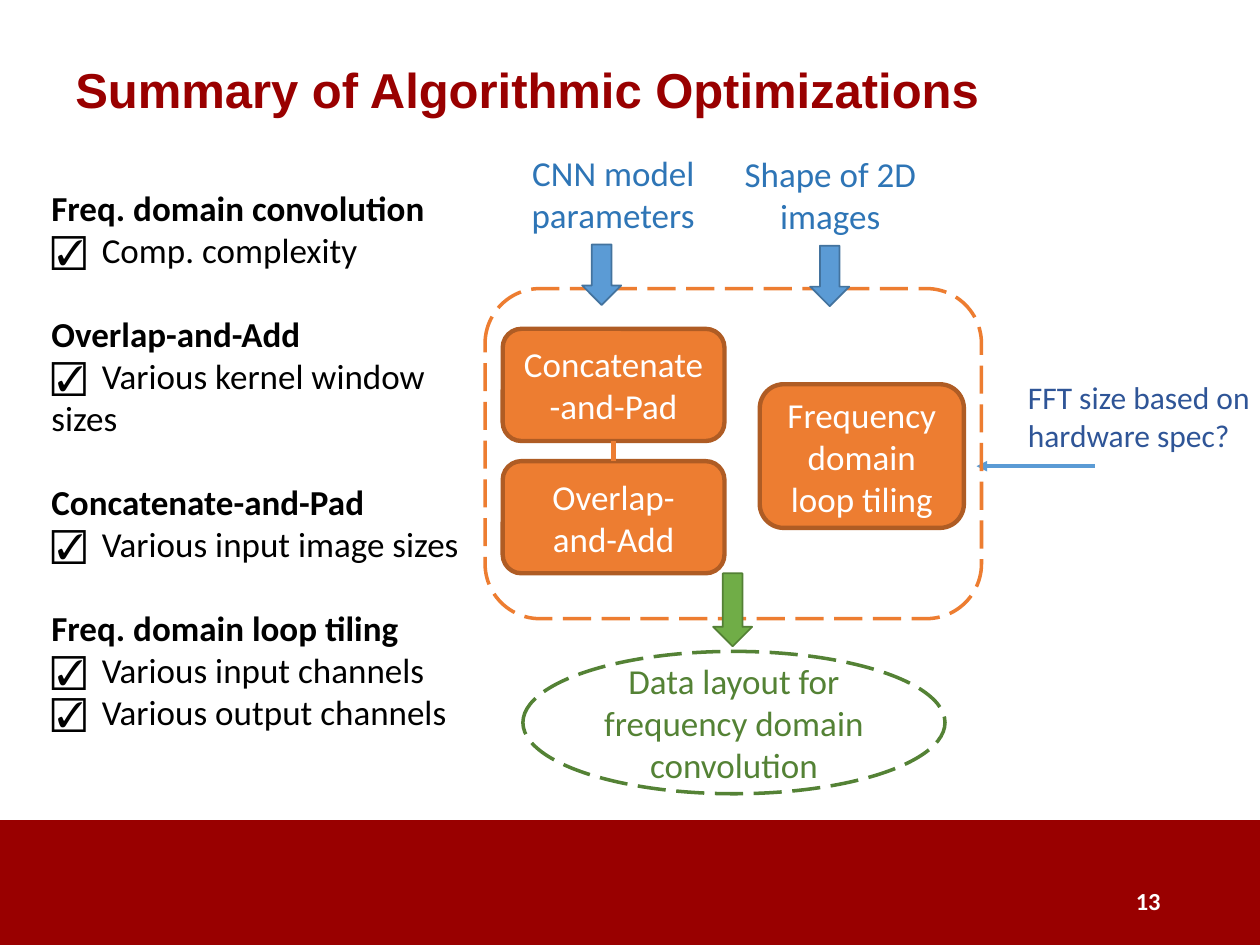
from dataclasses import dataclass

from pptx import Presentation
from pptx import util as u
from pptx.dml.color import RGBColor
from pptx.enum import dml, shapes, text
from pptx.oxml.ns import qn
from lxml import etree

COLORS = {
    "cardinal": "990000", "white": "FFFFFF", "black": "000000",
    "orange": "ED7D31", "rust": "AF5C24",
    "sky": "5B9BD5", "steel": "43739E", "blue": "2E75B6", "navy": "2F5597",
    "leaf": "70AD47", "forest": "538035", "green": "548235",
}
COLUMNS, ROWS = 100, 75
CHECKLIST = {
    "Freq. domain convolution": ["Comp. complexity"],
    "Overlap-and-Add": ["Various kernel window sizes"],
    "Concatenate-and-Pad": ["Various input image sizes"],
    "Freq. domain loop tiling": ["Various input channels", "Various output channels"],
}
LEFT, CENTER, RIGHT = text.PP_ALIGN.LEFT, text.PP_ALIGN.CENTER, text.PP_ALIGN.RIGHT
TOP, MIDDLE = text.MSO_ANCHOR.TOP, text.MSO_ANCHOR.MIDDLE
SHAPE = shapes.MSO_SHAPE

prs = Presentation()
prs.slide_width, prs.slide_height = u.Inches(10), u.Inches(7.5)
slide = prs.slides.add_slide(prs.slide_layouts[6])


@dataclass
class Box:
    """A region measured in columns and rows of the slide grid."""
    left: float
    top: float
    width: float
    height: float

    def inner(self, left, top, width, height):
        return Box(self.left + left, self.top + top, width, height)

    def emu(self):
        column, row = prs.slide_width / COLUMNS, prs.slide_height / ROWS
        return [round(n * unit) for n, unit in
                zip((self.left, self.top, self.width, self.height), (column, row) * 2)]


def rgb(name):
    return RGBColor.from_string(COLORS[name])


def format_runs(paragraph, size, color, bold=False, font="Calibri"):
    for run in paragraph.runs:
        run.font.size, run.font.bold, run.font.name = u.Pt(size), bold, font
        run.font.color.rgb = rgb(color)


def write(frame, words, size, color, align=LEFT, anchor=TOP, **style):
    frame.word_wrap, frame.vertical_anchor = True, anchor
    frame.text = words
    paragraph = frame.paragraphs[0]
    paragraph.alignment = align
    format_runs(paragraph, size, color, **style)
    return paragraph


def label(box, words, size, color, **style):
    return write(slide.shapes.add_textbox(*box.emu()).text_frame, words, size, color, **style)


def set_line(line, color, weight, dashed=False):
    line.color.rgb, line.width = rgb(color), u.Pt(weight)
    if dashed:
        line.dash_style = dml.MSO_LINE.LONG_DASH


def draw(box, kind, fill=None, line=None, weight=1, dashed=False):
    shape = slide.shapes.add_shape(kind, *box.emu())
    shape.shadow.inherit = False
    if fill:
        shape.fill.solid()
        shape.fill.fore_color.rgb = rgb(fill)
    else:
        shape.fill.background()
    if line:
        set_line(shape.line, line, weight, dashed)
    else:
        shape.line.fill.background()
    return shape


def connect(box, color, weight, arrow=False):
    """Run a line from the box's left top by its width and height, which may be negative."""
    left, top, width, height = box.emu()
    link = slide.shapes.add_connector(
        shapes.MSO_CONNECTOR.STRAIGHT, left, top, left + width, top + height)
    set_line(link.line, color, weight)
    properties = link._element.spPr
    if arrow:
        etree.SubElement(properties.find(qn("a:ln")), qn("a:tailEnd"), type="triangle")
    etree.SubElement(properties, qn("a:effectLst"))


def footer(box):
    draw(box, SHAPE.RECTANGLE, "cardinal")
    label(box.inner(70.6, 4.4, 22.5, 4), "13", 14, "white",
          align=RIGHT, anchor=MIDDLE, bold=True)


def title(box):
    heading = label(box, "Summary of Algorithmic Optimizations", 28, "cardinal",
                    anchor=MIDDLE, bold=True, font="Arial")
    heading.line_spacing = 0.9


def add_tab_stop(paragraph, inches):
    stops = etree.SubElement(paragraph._p.get_or_add_pPr(), qn("a:tabLst"))
    etree.SubElement(stops, qn("a:tab"), pos=str(u.Inches(inches)), algn="l")


def checklist(box):
    frame = slide.shapes.add_textbox(*box.emu()).text_frame
    frame.word_wrap = True
    for number, (topic, benefits) in enumerate(CHECKLIST.items()):
        heading = frame.add_paragraph() if number else frame.paragraphs[0]
        heading.text = topic
        if number:
            heading.space_before = u.Pt(24)
        format_runs(heading, 20, "black", bold=True)
        for benefit in benefits:
            item = frame.add_paragraph()
            add_tab_stop(item, 0.4)
            item.text = f"☑\t{benefit}"
            format_runs(item, 20, "black")


def hardware_hint(box):
    connect(box.inner(9.4, 7.5, -9.4, 0), "sky", 2, arrow=True)
    label(box.inner(3.1, 0, 20, 7.1), "FFT size based on hardware spec?", 18, "navy")


def pipeline(box):
    steps = {
        "Overlap-and-Add": (1.4, 13.7, 17.6, 8.9),
        "Concatenate-and-Pad": (1.4, 3.2, 17.6, 8.9),
        "Frequency domain loop tiling": (21.8, 7.6, 16.2, 11.4),
    }
    for step, place in steps.items():
        block = draw(box.inner(*place), SHAPE.ROUNDED_RECTANGLE, "orange", "rust", 2.5)
        write(block.text_frame, step, 20, "white", align=CENTER, anchor=MIDDLE)
    draw(box, SHAPE.ROUNDED_RECTANGLE, line="orange", weight=2, dashed=True)
    connect(box.inner(10.2, 12.1, 0, 1.6), "orange", 2.5)


def data_layout(box):
    draw(box.inner(15.1, 0, 3.1, 5.8), SHAPE.DOWN_ARROW, "leaf", "forest")
    result = draw(box.inner(0, 6.2, box.width, 11.3), SHAPE.OVAL, "white", "green", 2, True)
    write(result.text_frame, "Data layout for frequency domain convolution", 20, "green",
          align=CENTER, anchor=MIDDLE)


def pipeline_input(box, words, arrow_left, align):
    draw(box.inner(arrow_left, 7.9, 3.1, 4.8), SHAPE.DOWN_ARROW, "sky", "steel")
    label(box.inner(0, 0, box.width, 7.7), words, 20, "blue", align=align)


def main():
    footer(Box(0, 65.1, COLUMNS, 9.9))
    title(Box(5, 3, 90, 8.7))
    hardware_hint(Box(77.5, 29.5, 23.1, 7.5))
    pipeline(Box(38.5, 22.9, 39.4, 26.2))
    data_layout(Box(41.5, 45.5, 33.5, 17.5))
    pipeline_input(Box(37.9, 11.5, 18.2, 12.7), "CNN model parameters", 8.3, RIGHT)
    pipeline_input(Box(56.8, 11.6, 18.2, 12.7), "Shape of 2D images", 7.5, CENTER)
    checklist(Box(3.1, 14.3, 34.7, 44.8))
    prs.save("out.pptx")


if __name__ == "__main__":
    main()
